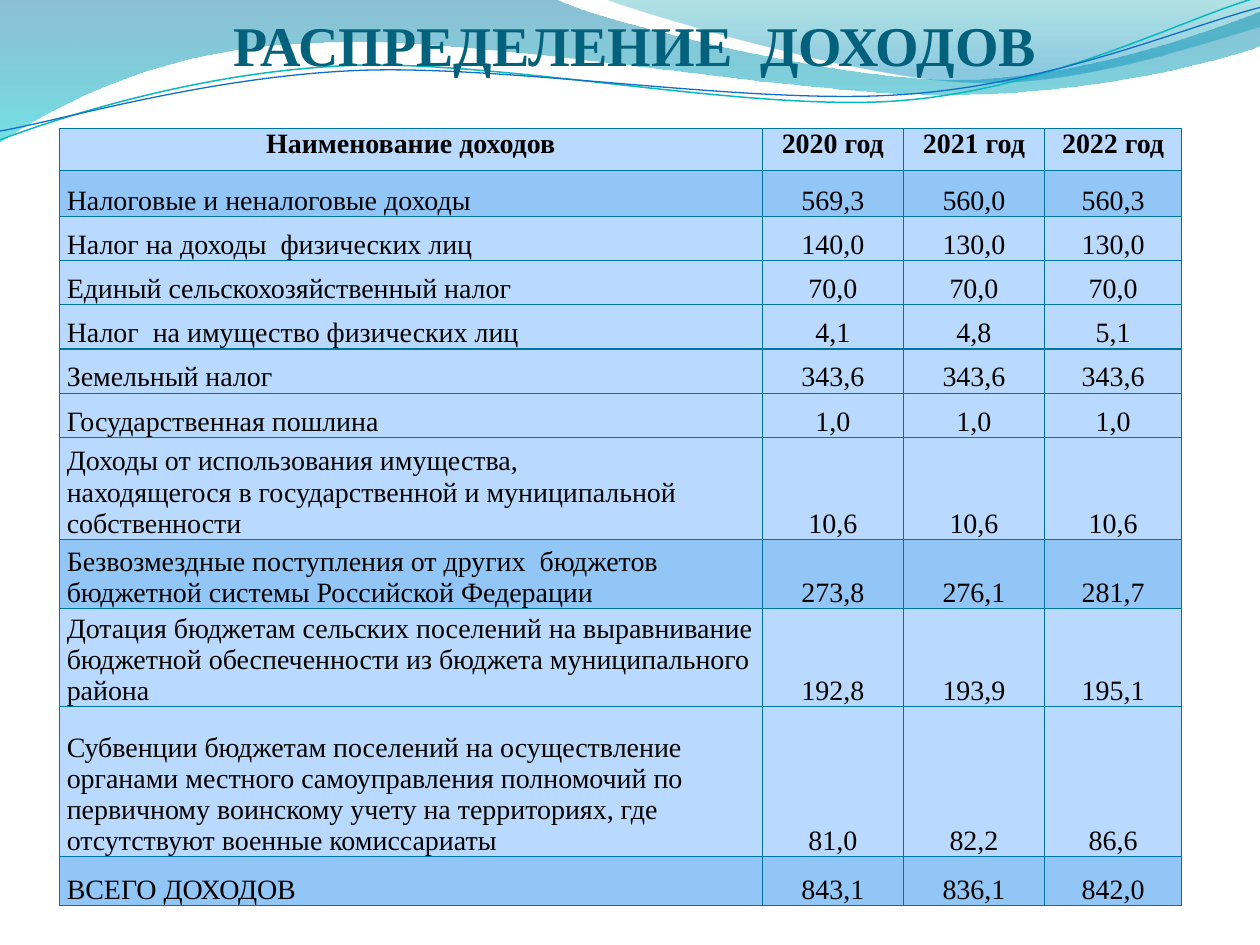
from math import cos, radians, sin

from lxml.etree import SubElement
from pptx import Presentation
from pptx.dml.color import RGBColor
from pptx.enum.text import MSO_ANCHOR as ANCHOR, MSO_AUTO_SIZE as AUTO, PP_ALIGN as ALIGN
from pptx.oxml.ns import qn
from pptx.util import Inches, Pt

FONT = "Times New Roman"
BLACK = RGBColor(0x00, 0x00, 0x00)
TITLE = RGBColor(0x04, 0x61, 0x7B)
BORDER = RGBColor(0x00, 0x74, 0xA1)
LIGHT = RGBColor(0xB9, 0xDA, 0xFE)
ACCENT = RGBColor(0x91, 0xC6, 0xF7)
CYAN = RGBColor(0x00, 0xC6, 0xCF)
TEAL = RGBColor(0x00, 0xA1, 0xA9)
AZURE = RGBColor(0x00, 0x8B, 0xBF)
TEAL_LINE = RGBColor(0x0A, 0xB8, 0xBF)
BLUE_LINE = RGBColor(0x0F, 0x6F, 0xC6)
TILT = 2.7

WAVES = [
    ([[(0, 0)], [(4.4, -0.01)],
      [(4.76, 0.17), (6.64, 0.63), (7.58, 0.63)],
      [(8.53, 0.63), (9.58, 0.26), (10, 0.09)], [(10.01, 0.36)],
      [(9.83, 0.44), (8.7, 0.76), (7.46, 0.75)],
      [(6.22, 0.75), (3.82, 0.28), (2.57, 0.34)],
      [(1.29, 0.36), (0.46, 0.83), (-0.01, 1.13)], [(0, 0)]],
     [(0, BORDER, 45), (1, CYAN, 55)]),
    ([[(4.79, -0.01)],
      [(5.09, 0.11), (6.82, 0.62), (7.69, 0.65)],
      [(8.56, 0.69), (9.61, 0.32), (10, 0.21)], [(10, 0)], [(4.79, -0.01)]],
     [(0, TEAL, 30), (0.8, AZURE, 45)]),
]
STROKES = [
    ([[(0, 1.11)],
      [(0.48, 0.93), (1.58, 0.57), (2.77, 0.52)],
      [(3.95, 0.47), (5.93, 0.89), (7.13, 0.8)],
      [(8.33, 0.71), (9.38, 0.15), (9.98, -0.02)]], (4.99, 0.57), TEAL_LINE, 0.85),
    ([[(0, 1.04)],
      [(0.47, 0.96), (1.64, 0.61), (2.83, 0.56)],
      [(4.03, 0.51), (5.97, 0.84), (7.17, 0.75)],
      [(8.36, 0.67), (9.41, 0.21), (10, 0.06)]], (5, 0.59), BLUE_LINE, 0.75),
]

COLUMNS = [5.58, 1.12, 1.12, 1.09]
HEADER = ("Наименование доходов", "2020 год", "2021 год", "2022 год")
INCOME = [
    (0.37, ACCENT, "Налоговые и неналоговые доходы", "569,3", "560,0", "560,3"),
    (0.35, LIGHT, "Налог на доходы  физических лиц", "140,0", "130,0", "130,0"),
    (0.35, LIGHT, "Единый сельскохозяйственный налог", "70,0", "70,0", "70,0"),
    (0.35, LIGHT, "Налог  на имущество физических лиц", "4,1", "4,8", "5,1"),
    (0.35, LIGHT, "Земельный налог", "343,6", "343,6", "343,6"),
    (0.35, LIGHT, "Государственная пошлина", "1,0", "1,0", "1,0"),
    (0.81, LIGHT, "Доходы от использования имущества,\nнаходящегося в государственной "
     "и муниципальной собственности", "10,6", "10,6", "10,6"),
    (0.55, ACCENT, "Безвозмездные поступления от других  бюджетов бюджетной системы "
     "Российской Федерации", "273,8", "276,1", "281,7"),
    (0.78, LIGHT, "Дотация бюджетам сельских поселений на выравнивание бюджетной "
     "обеспеченности из бюджета муниципального района", "192,8", "193,9", "195,1"),
    (1.19, LIGHT, "Субвенции бюджетам поселений на осуществление органами местного "
     "самоуправления полномочий по первичному воинскому учету на территориях, где "
     "отсутствуют военные комиссариаты", "81,0", "82,2", "86,6"),
    (0.39, ACCENT, "ВСЕГО ДОХОДОВ", "843,1", "836,1", "842,0"),
]


def set_all(obj, values):
    """Set every attribute named in values on obj."""
    for name, value in values.items():
        setattr(obj, name, value)


def write(tf, text, size, color, bold, align):
    """Fill a text frame with formatted paragraphs."""
    tf.text = text
    for p in tf.paragraphs:
        p.alignment = align
        for r in p.runs:
            set_all(r.font, {"name": FONT, "size": Pt(size), "bold": bold})
            r.font.color.rgb = color


def turn(point, center, degrees):
    """Return the point rotated clockwise about the center."""
    dx, dy = point[0] - center[0], point[1] - center[1]
    c, n = cos(radians(degrees)), sin(radians(degrees))
    return center[0] + dx * c - dy * n, center[1] + dx * n + dy * c


def add_outline(s, parts, close):
    """Add a freeform whose one-point parts are straight and three-point parts Bezier."""
    start, *rest = [(Inches(x), Inches(y)) for part in parts for x, y in part]
    builder = s.shapes.build_freeform(*start, scale=1.0)
    builder.add_line_segments(rest, close=close)
    sp = builder.convert_to_shape()
    sp.shadow.inherit = False
    segments = iter(list(sp.element.iter(qn("a:lnTo"))))
    for part in parts[1:]:
        lines = [next(segments) for _ in part]
        if len(part) == 3:
            outline = lines[0].getparent()
            curve = SubElement(outline, qn("a:cubicBezTo"))
            lines[0].addprevious(curve)
            for line in lines:
                curve.append(line[0])
                outline.remove(line)
    return sp


def add_wave(s, parts, stops):
    """Add a wave with a translucent vertical gradient."""
    sp = add_outline(s, parts, True)
    sp.line.fill.background()
    sp.fill.gradient()
    sp.fill.gradient_angle = 270
    for stop, (position, color, _) in zip(sp.fill.gradient_stops, stops):
        stop.color.rgb = color
        stop.position = position
    for clr, (_, _, alpha) in zip(sp.element.iter(qn("a:srgbClr")), stops):
        SubElement(clr, qn("a:alpha"), val=str(alpha * 1000))


def add_stroke(s, parts, center, color, width):
    """Add an open curved line, tilted as a rotated shape."""
    level = [[turn(point, center, TILT) for point in part] for part in parts]
    sp = add_outline(s, level, False)
    sp.rotation = 360 - TILT
    sp.fill.background()
    sp.line.color.rgb = color
    sp.line.width = Pt(width)


def format_title(s):
    """Place the title in front of the waves."""
    sp = s.shapes.title
    s.shapes.element.append(sp.element)
    set_all(sp, {"left": Inches(0.5), "top": Inches(0.23),
                 "width": Inches(9.08), "height": Inches(0.39)})
    set_all(sp.text_frame, {
        "margin_left": 0, "margin_right": 0, "margin_top": Inches(0.05), "margin_bottom": 0,
        "vertical_anchor": ANCHOR.BOTTOM, "word_wrap": True, "auto_size": AUTO.NONE})
    write(sp.text_frame, "РАСПРЕДЕЛЕНИЕ  ДОХОДОВ", 32, TITLE, True, ALIGN.CENTER)


def add_borders(cell):
    """Draw a thin line on all four sides of a cell."""
    tcPr = cell._tc.get_or_add_tcPr()
    for side in ("lnL", "lnR", "lnT", "lnB"):
        ln = SubElement(tcPr, qn(f"a:{side}"), w=str(Pt(0.75)))
        SubElement(SubElement(ln, qn("a:solidFill")), qn("a:srgbClr"), val=str(BORDER))


def add_income_table(s):
    """Add the table of income by year."""
    rows = [(0.33, LIGHT, *HEADER), *INCOME]
    height = sum(row[0] for row in rows)
    table = s.shapes.add_table(len(rows), len(COLUMNS), Inches(0.47), Inches(1.02),
                               Inches(sum(COLUMNS)), Inches(height)).table
    set_all(table, {"first_row": False, "horz_banding": False})
    for column, width in zip(table.columns, COLUMNS):
        column.width = Inches(width)
    for i, (row_height, fill, *texts) in enumerate(rows):
        table.rows[i].height = Inches(row_height)
        for j, text in enumerate(texts):
            header = i == 0
            cell = table.cell(i, j)
            set_all(cell, {
                "margin_left": Inches(0.06), "margin_right": Inches(0.06),
                "margin_top": 0, "margin_bottom": 0,
                "vertical_anchor": ANCHOR.TOP if header else ANCHOR.BOTTOM})
            add_borders(cell)
            cell.fill.solid()
            cell.fill.fore_color.rgb = fill
            align = ALIGN.CENTER if header or j else ALIGN.LEFT
            write(cell.text_frame, text, 16, BLACK, header, align)


def main():
    """Build the income slide."""
    prs = Presentation()
    set_all(prs, {"slide_width": Inches(10), "slide_height": Inches(7.5)})
    s = prs.slides.add_slide(prs.slide_layouts[5])
    for wave in WAVES:
        add_wave(s, *wave)
    for stroke in STROKES:
        add_stroke(s, *stroke)
    format_title(s)
    add_income_table(s)
    prs.save("out.pptx")


if __name__ == "__main__":
    main()
